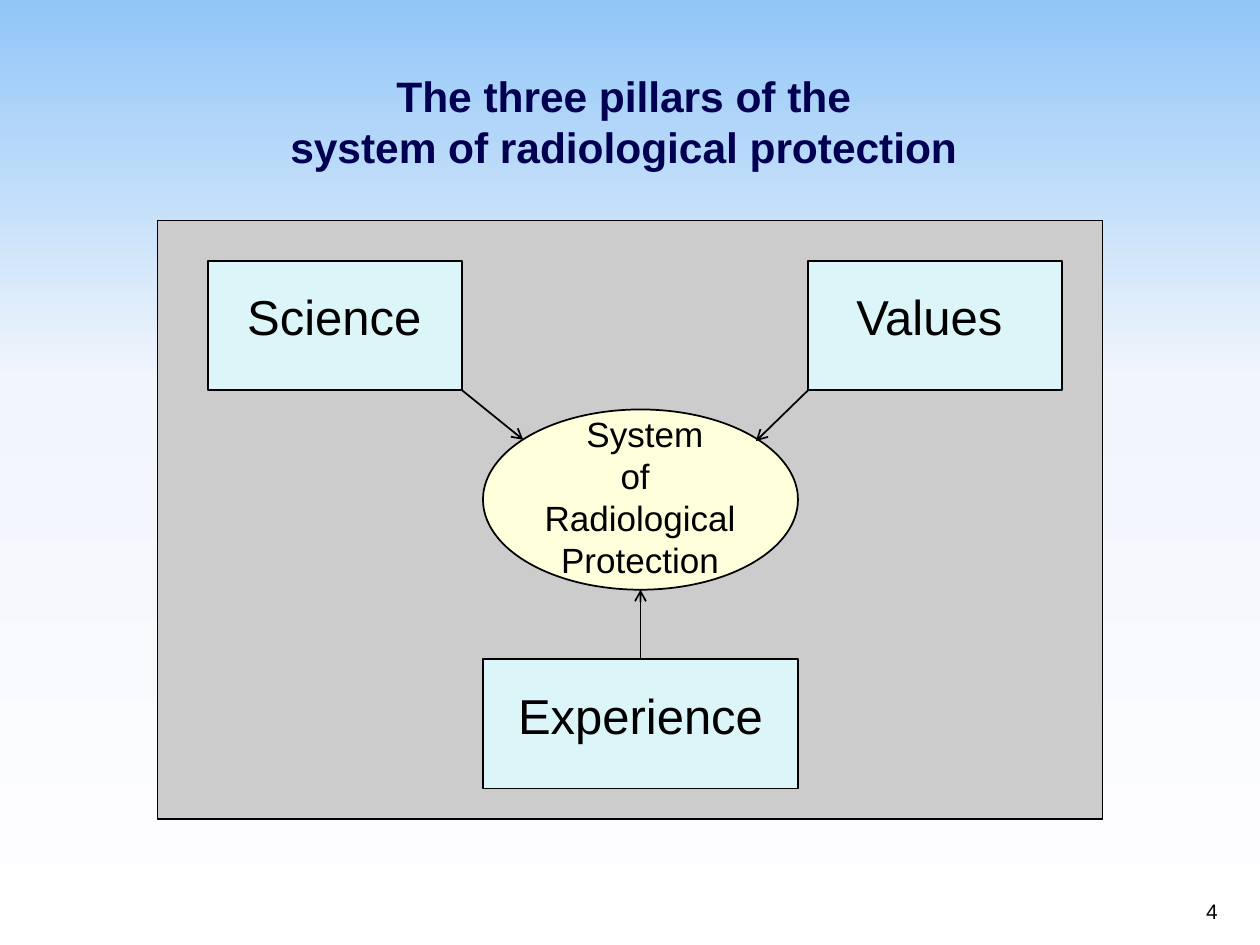
from copy import deepcopy

from lxml import etree
from pptx import Presentation
from pptx.dml.color import RGBColor
from pptx.enum.shapes import MSO_CONNECTOR, MSO_SHAPE
from pptx.enum.text import MSO_ANCHOR, PP_ALIGN
from pptx.oxml.ns import qn
from pptx.util import Pt

RECTANGLE, OVAL = MSO_SHAPE.RECTANGLE, MSO_SHAPE.OVAL
STRAIGHT = MSO_CONNECTOR.STRAIGHT
CENTER, RIGHT = PP_ALIGN.CENTER, PP_ALIGN.RIGHT
TOP, MIDDLE, BOTTOM = MSO_ANCHOR.TOP, MSO_ANCHOR.MIDDLE, MSO_ANCHOR.BOTTOM

COLORS = {
    "sky": "91C6F7",
    "haze": "F1F5FC",
    "white": "FFFFFF",
    "title": "000053",
    "black": "000000",
    "panel": "CCCCCC",
    "pillar": "DBF5F9",
    "core": "FFFFDC",
}


def color(name):
    return RGBColor.from_string(COLORS[name])


def write(frame, lines, size, ink="black", align=CENTER, anchor=TOP, bold=False):
    frame.word_wrap = True
    frame.vertical_anchor = anchor
    frame.text = "\n".join(lines)
    for para in frame.paragraphs:
        para.alignment = align
        para.font.name = "Arial"
        para.font.size = Pt(size)
        para.font.bold = bold
        para.font.color.rgb = color(ink)


deck = Presentation()
deck.slide_width, deck.slide_height = Pt(720), Pt(540)
page = deck.slides.add_slide(deck.slide_layouts[5])

backdrop = page.background.fill
backdrop.gradient()
backdrop.gradient_angle = 270
stop_list = page.element.find(".//" + qn("a:gsLst"))
stop_list.insert(1, deepcopy(stop_list[0]))
for stop, name, position in zip(backdrop.gradient_stops, ("sky", "haze", "white"), (0, 0.4, 1)):
    stop.color.rgb = color(name)
    stop.position = position

title = page.shapes.title
title.left, title.top, title.width, title.height = Pt(0), Pt(30), Pt(720), Pt(96)
frame = title.text_frame
frame.margin_left, frame.margin_top = Pt(0), Pt(0)
frame.margin_right, frame.margin_bottom = Pt(7), Pt(18)
write(frame, ["The three pillars of the", "system of radiological protection"],
      24.3, "title", anchor=MIDDLE, bold=True)

number = page.shapes.add_textbox(Pt(553), Pt(495.5), Pt(150), Pt(36))
write(number.text_frame, ["4"], 12, align=RIGHT, anchor=BOTTOM)

shapes = {}
for name, kind, fill, line, left, top, width, height in [
    ("Panel", RECTANGLE, "panel", 0.75, 90, 126, 540, 342),
    ("System", OVAL, "core", 1, 276, 234, 180, 103),
    ("Science", RECTANGLE, "pillar", 1, 119, 149, 145, 74),
    ("Experience", RECTANGLE, "pillar", 1, 276, 376.6, 180, 74),
    ("Values", RECTANGLE, "pillar", 1, 461.8, 149, 145, 74),
]:
    shape = page.shapes.add_shape(kind, Pt(left), Pt(top), Pt(width), Pt(height))
    shape.shadow.inherit = False
    shape.fill.solid()
    shape.fill.fore_color.rgb = color(fill)
    shape.line.color.rgb = color("black")
    shape.line.width = Pt(line)
    shapes[name] = shape

for lines, size, left, top, width, height in [
    (["Science"], 28, 119.5, 160, 143, 40),
    (["Experience"], 28, 274, 388, 184, 40),
    (["Values"], 28, 459.5, 160, 143, 40),
    ([" System", "of ", "Radiological Protection"], 20, 270, 232, 191.5, 130),
]:
    label = page.shapes.add_textbox(Pt(left), Pt(top), Pt(width), Pt(height))
    write(label.text_frame, lines, size)

arrows = []
for start_x, start_y, end_x, end_y in [
    (264, 223, 299, 251.3),
    (461.8, 223, 432, 252),
    (366, 376.6, 366, 337),
]:
    arrow = page.shapes.add_connector(STRAIGHT, Pt(start_x), Pt(start_y), Pt(end_x), Pt(end_y))
    arrow.line.color.rgb = color("black")
    arrow.line.width = Pt(1)
    etree.SubElement(arrow.line._get_or_add_ln(), qn("a:tailEnd"), type="arrow")
    etree.SubElement(arrow.element.spPr, qn("a:effectLst"))
    arrows.append(arrow)
arrows[-1].begin_connect(shapes["Experience"], 0)

deck.save("out.pptx")
